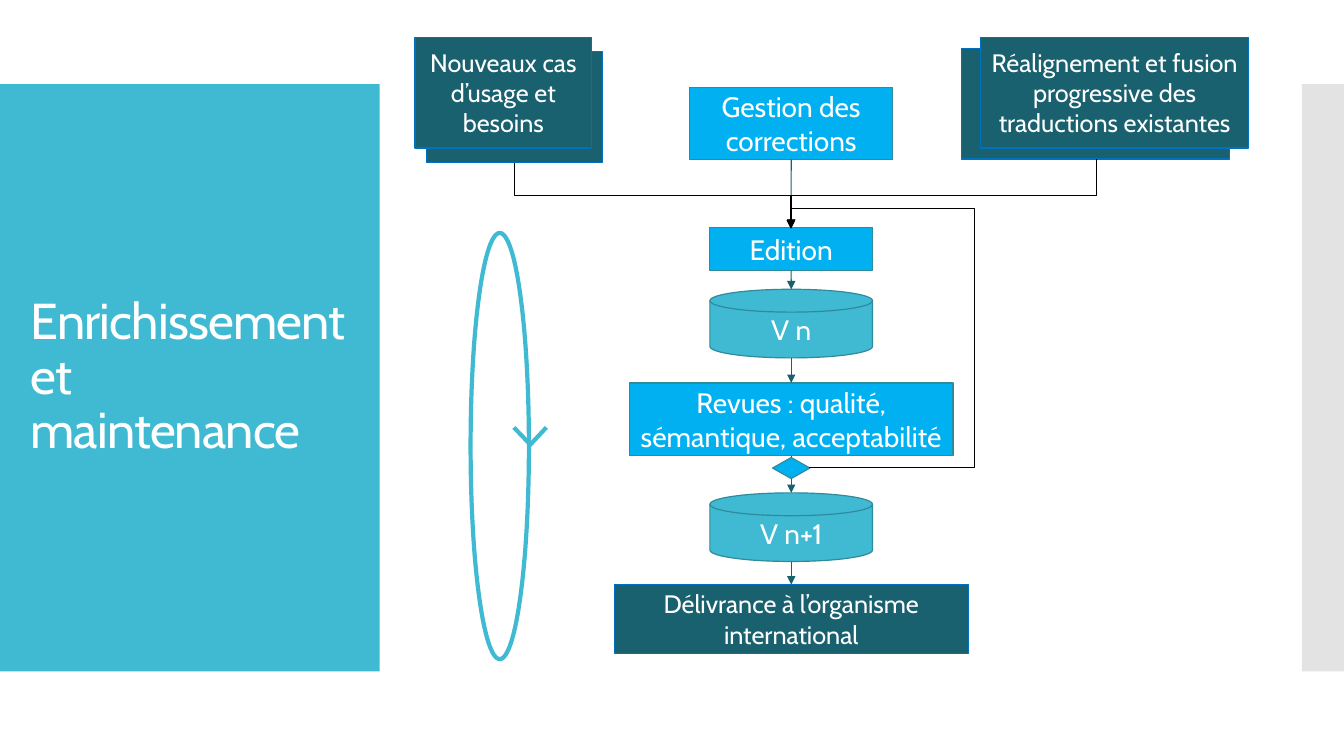
from pptx import Presentation
from pptx.dml.color import RGBColor
from pptx.enum.shapes import MSO_CONNECTOR as Link, MSO_SHAPE as Geo
from pptx.enum.text import MSO_ANCHOR as Anchor, PP_ALIGN as Align
from pptx.oxml.ns import qn
from pptx.util import Cm, Pt
from lxml.etree import SubElement

INK = {
    "teal": "40BAD2", "deep": "1A616F", "blue": "00B0F0", "edge": "2F8A9B",
    "royal": "0070C0", "gray": "C8C8C8", "white": "FFFFFF", "black": "000000",
}
FONT = "Cabin"
MID = 19.94


def tint(name):
    return RGBColor.from_string(INK[name])


def write(frame, text, size, align):
    frame.word_wrap = True
    frame.vertical_anchor = Anchor.MIDDLE
    para = frame.paragraphs[0]
    para.alignment = align
    run = para.add_run()
    run.text = text
    run.font.name = FONT
    run.font.size = Pt(size)
    run.font.color.rgb = tint("white")
    return para, run


def add_box(slide, geo, area, fill=None, line=None, width=0.85):
    box = slide.shapes.add_shape(geo, *map(Cm, area))
    box.shadow.inherit = False
    if fill:
        box.fill.solid()
        box.fill.fore_color.rgb = tint(fill)
    else:
        box.fill.background()
    if line:
        box.line.color.rgb = tint(line)
        box.line.width = Pt(width)
    else:
        box.line.fill.background()
    return box


def add_step(slide, geo, top, width, height, fill, text=None, line="edge", size=20):
    area = (MID - width / 2, top, width, height)
    step = add_box(slide, geo, area, fill, line)
    if text:
        write(step.text_frame, text, size, Align.CENTER)
    if fill == "blue":
        step.text_frame.margin_left = step.text_frame.margin_right = 0
    return step


def add_stack(slide, left, top, width, shift, drop, text):
    for dx, dy in ((shift, drop), (0, 0)):
        area = (left + dx, top + dy, width, 2.79)
        card = add_box(slide, Geo.RECTANGLE, area, "deep", "royal")
    write(card.text_frame, text, 18, Align.CENTER)


def style(link, color, width, arrow):
    link.line.color.rgb = tint(color)
    link.line.width = Pt(width)
    if arrow:
        SubElement(link.line._get_or_add_ln(), qn("a:tailEnd"), type="triangle")
    SubElement(link._element.spPr, qn("a:effectLst"))


def add_line(slide, ends, color, width, arrow=False):
    link = slide.shapes.add_connector(Link.STRAIGHT, *map(Cm, ends))
    style(link, color, width, arrow)
    return link


def add_flow(slide, top, end, start=None, goal=None):
    link = add_line(slide, (MID, top, MID, end), "deep", 0.75, True)
    if start:
        link.begin_connect(start, 2)
    if goal:
        link.end_connect(goal, 0)


def add_elbow(slide, area, kind, turn, flips, bends):
    left, top, width, height = area
    ends = (left, top, left + width, top + height)
    link = slide.shapes.add_connector(Link.ELBOW, *map(Cm, ends))
    form = link._element.spPr.find(qn("a:xfrm"))
    form.set("rot", str(turn * 60000))
    for flip in flips:
        form.set(flip, "1")
    geom = link._element.spPr.find(qn("a:prstGeom"))
    geom.set("prst", kind)
    marks = geom.find(qn("a:avLst"))
    if marks is None:
        marks = SubElement(geom, qn("a:avLst"))
    for num, bend in enumerate(bends, 1):
        name = f"adj{num}"
        SubElement(marks, qn("a:gd"), name=name, fmla=f"val {round(bend * 100000)}")
    style(link, "black", 0.75, True)


def add_title(slide, text):
    add_box(slide, Geo.RECTANGLE, (0, 2.12, 9.57, 14.8), "teal")
    band = add_box(slide, Geo.RECTANGLE, (32.81, 2.12, 1.06, 14.8), "gray")
    shade = band._element.spPr.find(qn("a:solidFill"))[0]
    SubElement(shade, qn("a:alpha"), val="50000")
    title = slide.shapes.add_textbox(Cm(0.52), Cm(3.13), Cm(8.46), Cm(12.78))
    para, run = write(title.text_frame, text, 36, Align.LEFT)
    para.line_spacing = 0.9
    run.font._element.set("spc", "-60")


def add_cycle(slide):
    add_box(slide, Geo.OVAL, (11.86, 5.87, 1.47, 10.74), None, "teal", 3)
    for start, end in ((13.34, 13.77), (13.39, 12.95)):
        add_line(slide, (start, 11.23, end, 10.77), "teal", 3)


def main():
    deck = Presentation()
    deck.slide_width, deck.slide_height = Cm(33.87), Cm(19.05)
    slide = deck.slides.add_slide(deck.slide_layouts[6])
    add_title(slide, "Enrichissement et maintenance")
    add_stack(slide, 24.71, 0.94, 6.76, -0.48, 0.28,
              "Réalignement et fusion progressive des traductions existantes")
    add_stack(slide, 10.46, 0.94, 4.45, 0.28, 0.36, "Nouveaux cas d’usage et besoins")
    add_cycle(slide)

    rect, disk = Geo.RECTANGLE, Geo.FLOWCHART_MAGNETIC_DISK
    fixes = add_step(slide, rect, 2.21, 5.12, 1.81, "blue", "Gestion des corrections")
    edit = add_step(slide, rect, 5.74, 4.1, 1.07, "blue", "Edition")
    add_step(slide, disk, 7.29, 4.1, 1.73, "teal", "V n")
    review = add_step(slide, rect, 9.65, 8.16, 1.83, "blue",
                      "Revues : qualité, sémantique, acceptabilité")
    add_step(slide, disk, 12.42, 4.1, 1.73, "teal", "V n+1")
    issue = add_step(slide, rect, 14.73, 8.92, 1.73, "deep",
                     "Délivrance à l’organisme international", "royal", 18)

    add_flow(slide, 4.02, 5.74, fixes, edit)
    add_flow(slide, 6.81, 7.29, edit)
    add_flow(slide, 9.02, 9.65, goal=review)
    add_flow(slide, 11.48, 12.42, review)
    add_flow(slide, 14.15, 14.73, goal=issue)
    add_step(slide, Geo.DIAMOND, 11.53, 0.94, 0.53, "blue")

    add_elbow(slide, (MID, 5.74, 0.46, 6.05), "bentConnector4", 0,
              ("flipH", "flipV"), (-9.07, 1.08))
    add_elbow(slide, (15.62, 1.45, 1.65, 6.96), "bentConnector3", 270, ("flipH",), (0.5,))
    add_elbow(slide, (22.91, 1.04, 1.75, 7.7), "bentConnector3", 90, (), (0.52,))
    deck.save("out.pptx")


if __name__ == "__main__":
    main()
